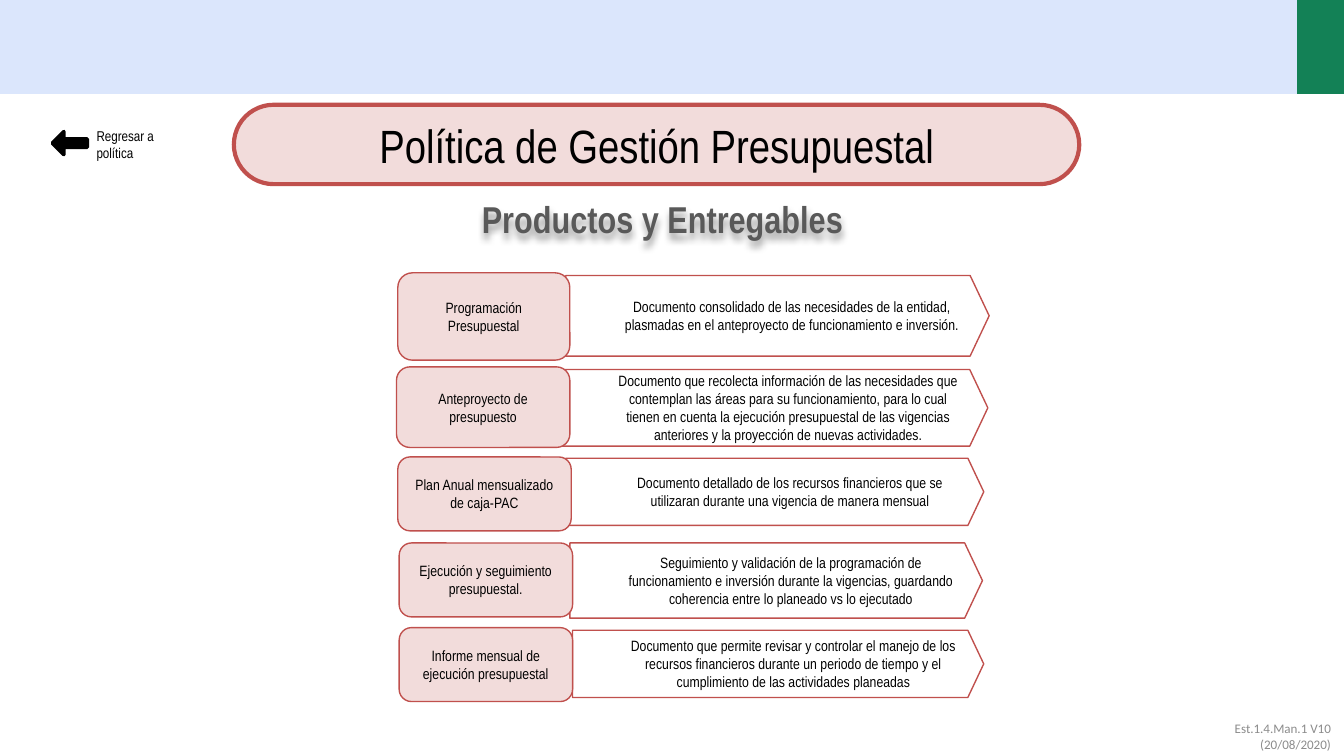
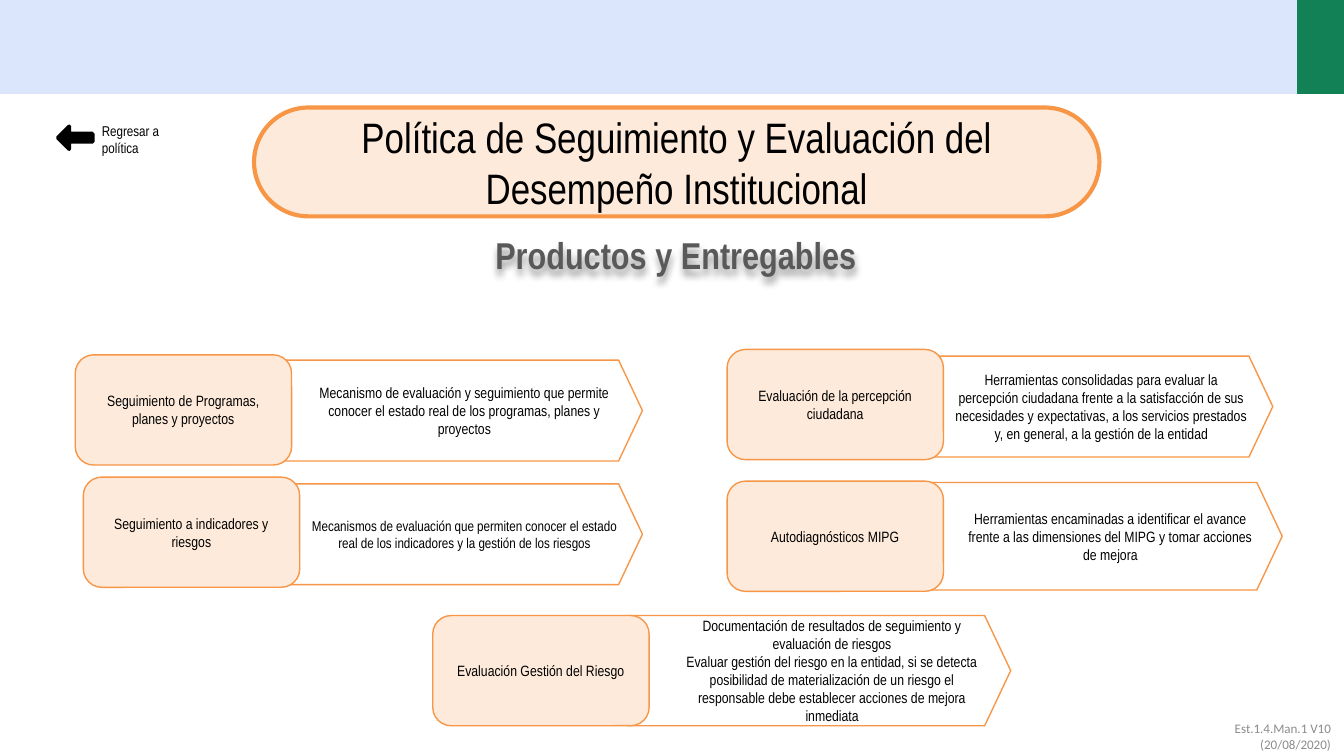
from dataclasses import dataclass

from lxml import etree
from pptx import Presentation
from pptx.dml.color import RGBColor
from pptx.enum.shapes import MSO_SHAPE
from pptx.enum.text import MSO_ANCHOR, PP_ALIGN
from pptx.oxml.ns import qn
from pptx.util import Inches, Pt

RECTANGLE = MSO_SHAPE.RECTANGLE
ROUNDED = MSO_SHAPE.ROUNDED_RECTANGLE
PENTAGON = MSO_SHAPE.PENTAGON
LEFT_ARROW = MSO_SHAPE.LEFT_ARROW
LEFT, CENTER, RIGHT = PP_ALIGN.LEFT, PP_ALIGN.CENTER, PP_ALIGN.RIGHT
TOP, MIDDLE = MSO_ANCHOR.TOP, MSO_ANCHOR.MIDDLE


@dataclass(frozen=True)
class Theme:
    font: str = "Arial Narrow"
    footer_font: str = "Calibri"
    band: str = "DBE6FC"
    corner: str = "138156"
    text: str = "000000"
    subtitle: str = "595959"
    footer: str = "8C8C8C"
    subtitle_size: float = 20
    card_size: float = 8
    small_size: float = 7.6
    footer_size: float = 7
    title_line: float = 2.25
    card_line: float = 0.75


@dataclass(frozen=True)
class Palette:
    fill: str
    line: str


@dataclass(frozen=True)
class Box:
    left: float
    top: float
    width: float
    height: float

    def inside(self, left, top, width, height):
        return Box(self.left + left, self.top + top, width, height)

    def lengths(self):
        return [Inches(n) for n in (self.left, self.top, self.width, self.height)]


THEME = Theme()
RED = Palette("F2DCDB", "C0504D")
ORANGE = Palette("FDEADA", "F79646")


@dataclass(frozen=True)
class Card:
    label: str
    label_box: Box
    details: tuple
    arrow_offset: tuple  # left, top, width, height from the label's corner
    size: float = THEME.card_size


# Basic parts
def add_shape(slide, kind, box, fill=None, line=None, line_width=0.75, adjustments=()):
    shape = slide.shapes.add_shape(kind, *box.lengths())
    shape.shadow.inherit = False
    for index, value in enumerate(adjustments):
        shape.adjustments[index] = value
    if fill:
        shape.fill.solid()
        shape.fill.fore_color.rgb = RGBColor.from_string(fill)
    else:
        shape.fill.background()
    if line:
        shape.line.color.rgb = RGBColor.from_string(line)
        shape.line.width = Pt(line_width)
    else:
        shape.line.fill.background()
    return shape


def write(shape, texts, size, color=THEME.text, font=THEME.font, bold=False,
          align=CENTER, anchor=MIDDLE, indent=0):
    frame = shape.text_frame
    frame.word_wrap = True
    frame.vertical_anchor = anchor
    for index, text in enumerate(texts):
        paragraph = frame.add_paragraph() if index else frame.paragraphs[0]
        paragraph.alignment = align
        if indent:
            properties = paragraph._p.get_or_add_pPr()
            properties.set("marL", str(Inches(indent)))
            properties.set("indent", "0")
        run = paragraph.add_run()
        run.text = text
        run.font.size = Pt(size)
        run.font.name = font
        run.font.bold = bold
        run.font.color.rgb = RGBColor.from_string(color)


def add_text(slide, box, text, size, **style):
    shape = slide.shapes.add_textbox(*box.lengths())
    write(shape, [text], size, **style)
    return shape


def add_soft_shadow(shape):
    effects = etree.SubElement(shape._element.spPr, qn("a:effectLst"))
    shadow = etree.SubElement(effects, qn("a:outerShdw"), blurRad="50800",
                              dist="38100", dir="5400000", algn="t", rotWithShape="0")
    color = etree.SubElement(shadow, qn("a:prstClr"), val="black")
    etree.SubElement(color, qn("a:alpha"), val="40000")


# Regions
def add_header_band(slide, box):
    corner_width = 0.35
    band_width = box.width - corner_width
    add_shape(slide, RECTANGLE, box.inside(band_width, 0, corner_width, box.height),
              THEME.corner)
    add_shape(slide, RECTANGLE, box.inside(0, 0, band_width, box.height), THEME.band)


def add_title(slide, box, text, size, palette):
    title = add_shape(slide, ROUNDED, box, palette.fill, palette.line,
                      THEME.title_line, [0.5])
    write(title, [text], size)


def add_subtitle(slide, box):
    subtitle = add_text(slide, box, "Productos y Entregables", THEME.subtitle_size,
                        color=THEME.subtitle, bold=True, anchor=TOP)
    add_soft_shadow(subtitle)


def add_back_button(slide, box):
    add_shape(slide, LEFT_ARROW, box.inside(0, 0.08, 0.26, 0.17), THEME.text,
              THEME.text, 2, [0.357, 0.5])
    add_text(slide, box.inside(0.23, 0, 0.79, box.height), "Regresar a política",
             THEME.small_size, align=LEFT, anchor=TOP)


def add_footer(slide, box):
    add_text(slide, box, "Est.1.4.Man.1 V10 (20/08/2020)", THEME.footer_size,
             color=THEME.footer, font=THEME.footer_font, align=RIGHT)


def add_card(slide, card, palette):
    arrow = add_shape(slide, PENTAGON, card.label_box.inside(*card.arrow_offset),
                      None, palette.line, THEME.card_line, [0.236])
    write(arrow, card.details, card.size, indent=0.29)
    label = add_shape(slide, ROUNDED, card.label_box, palette.fill, palette.line,
                      THEME.card_line)
    write(label, [card.label], THEME.card_size)


def add_policy_slide(presentation, title, title_size, title_box, subtitle_box,
                     back_box, cards, palette):
    slide = presentation.slides.add_slide(presentation.slide_layouts[6])
    add_header_band(slide, Box(0, 0, 10, 0.7))
    add_title(slide, title_box, title, title_size, palette)
    for card in cards:
        add_card(slide, card, palette)
    add_subtitle(slide, subtitle_box)
    add_back_button(slide, back_box)
    add_footer(slide, Box(8.61, 5.33, 1.39, 0.3))


# Content
BUDGET_CARDS = [
    Card("Programación Presupuestal", Box(2.96, 2.03, 1.28, 0.65),
         ("Documento consolidado de las necesidades de la entidad, plasmadas en el "
          "anteproyecto de funcionamiento e inversión.",),
         (1.25, 0.02, 3.15, 0.6)),
    Card("Anteproyecto de presupuesto", Box(2.95, 2.73, 1.29, 0.6),
         ("Documento que recolecta información de las necesidades que contemplan las "
          "áreas para su funcionamiento, para lo cual tienen en cuenta la ejecución "
          "presupuestal de las vigencias anteriores y la proyección de nuevas "
          "actividades.",),
         (1.21, 0.02, 3.19, 0.57)),
    Card("Plan Anual mensualizado de caja-PAC", Box(2.96, 3.4, 1.29, 0.55),
         ("Documento detallado de los recursos financieros que se utilizaran durante "
          "una vigencia de manera mensual",),
         (1.25, 0.01, 3.11, 0.5)),
    Card("Ejecución y seguimiento presupuestal.", Box(2.97, 4.04, 1.29, 0.55),
         ("Seguimiento y validación de la programación de funcionamiento e inversión "
          "durante la vigencias, guardando coherencia entre lo planeado vs lo "
          "ejecutado",),
         (1.27, 0, 3.07, 0.56)),
    Card("Informe mensual de ejecución presupuestal", Box(2.97, 4.67, 1.29, 0.55),
         ("Documento que permite revisar y controlar el manejo de los recursos "
          "financieros durante un periodo de tiempo y el cumplimiento de las "
          "actividades planeadas",),
         (1.29, 0.02, 3.06, 0.5)),
]

LABEL_SIZE = (1.61, 0.82)
MONITORING_CARDS = [
    Card("Seguimiento de Programas, planes y proyectos", Box(0.56, 2.64, *LABEL_SIZE),
         ("Mecanismo de evaluación y seguimiento que permite conocer el estado real "
          "de los programas, planes y proyectos",),
         (1.37, 0.04, 2.85, 0.75)),
    Card("Seguimiento a indicadores y riesgos", Box(0.62, 3.55, *LABEL_SIZE),
         ("Mecanismos de evaluación que permiten conocer el estado real de los "
          "indicadores y la gestión de los riesgos",),
         (1.31, 0.05, 2.85, 0.75), THEME.small_size),
    Card("Evaluación de la percepción ciudadana", Box(5.41, 2.6, *LABEL_SIZE),
         ("Herramientas consolidadas para evaluar la percepción ciudadana frente a la "
          "satisfacción de sus necesidades y expectativas, a los servicios prestados "
          "y, en general, a la gestión de la entidad",),
         (1.31, 0.05, 2.75, 0.75)),
    Card("Evaluación Gestión del Riesgo", Box(3.22, 4.58, *LABEL_SIZE),
         ("Documentación de resultados de seguimiento y evaluación de riesgos",
          "Evaluar gestión del riesgo en la entidad, si se detecta posibilidad de "
          "materialización de un riesgo el responsable debe establecer acciones de "
          "mejora inmediata"),
         (1.45, 0, 2.85, 0.82)),
    Card("Autodiagnósticos MIPG", Box(5.41, 3.58, *LABEL_SIZE),
         ("Herramientas encaminadas a identificar el avance frente a las dimensiones "
          "del MIPG y tomar acciones de mejora",),
         (1.38, 0.01, 2.75, 0.8)),
]


def main():
    presentation = Presentation()
    presentation.slide_width = Inches(10)
    presentation.slide_height = Inches(10 * 9 / 16)
    add_policy_slide(presentation, "Política de Gestión Presupuestal", 25,
                     Box(1.74, 0.78, 6.29, 0.59), Box(1.21, 1.41, 7.44, 0.44),
                     Box(0.39, 0.9, 1.02, 0.36), BUDGET_CARDS, RED)
    add_policy_slide(presentation,
                     "Política de Seguimiento y Evaluación del Desempeño Institucional",
                     22.8, Box(1.89, 0.8, 6.29, 0.81), Box(1.31, 1.68, 7.44, 0.44),
                     Box(0.43, 0.86, 1.02, 0.36), MONITORING_CARDS, ORANGE)
    presentation.save("out.pptx")


if __name__ == "__main__":
    main()
